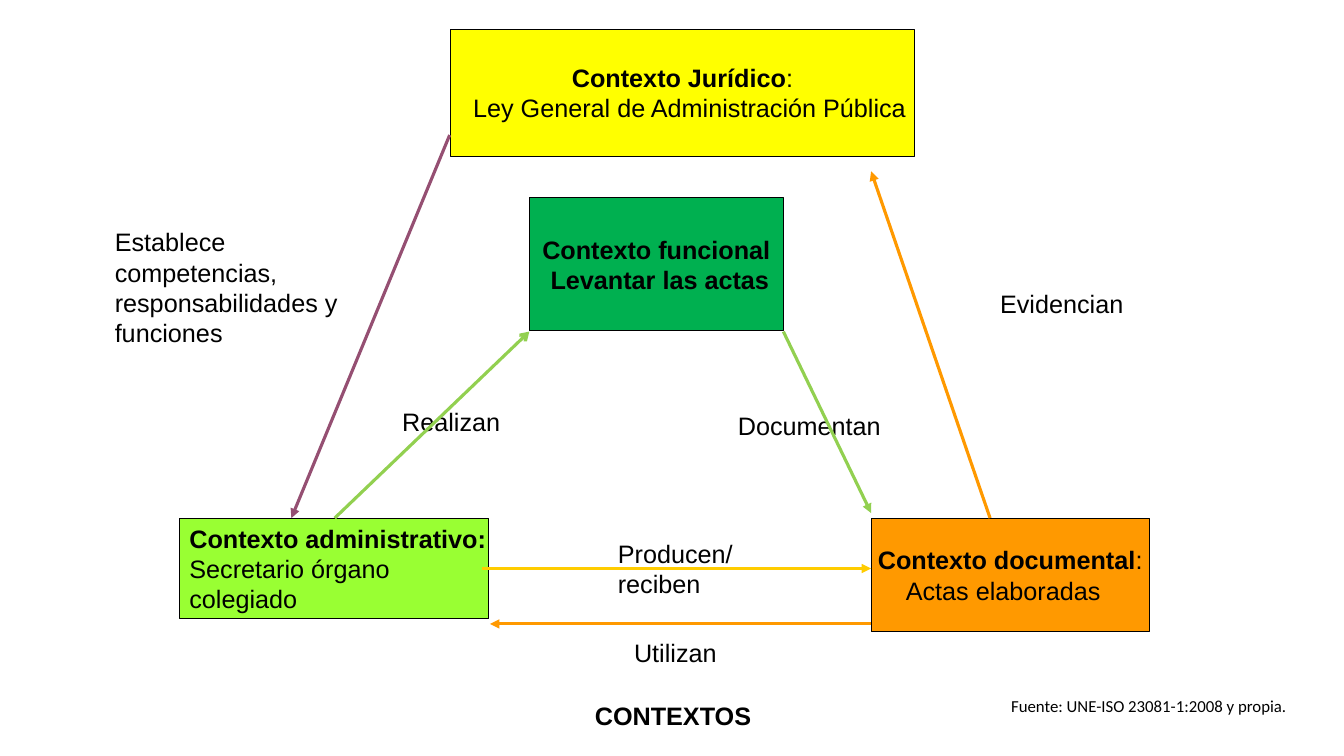
import pptx
import pptx.util
import pptx.dml.color
import pptx.enum.shapes
import pptx.enum.text
import pptx.oxml.ns
import lxml.etree

EMU_PER_PX = 9144
BLACK = pptx.dml.color.RGBColor(0x00, 0x00, 0x00)
YELLOW = pptx.dml.color.RGBColor(0xFF, 0xFF, 0x00)
LIME = pptx.dml.color.RGBColor(0x99, 0xFF, 0x33)
GREEN = pptx.dml.color.RGBColor(0x00, 0xB0, 0x50)
ORANGE = pptx.dml.color.RGBColor(0xFF, 0x99, 0x00)
PURPLE = pptx.dml.color.RGBColor(0x95, 0x4F, 0x72)
GOLD = pptx.dml.color.RGBColor(0xFF, 0xCC, 0x00)
LEAF = pptx.dml.color.RGBColor(0x92, 0xD0, 0x50)

LEFT = pptx.enum.text.PP_ALIGN.LEFT
CENTER = pptx.enum.text.PP_ALIGN.CENTER
TOP = pptx.enum.text.MSO_ANCHOR.TOP
MIDDLE = pptx.enum.text.MSO_ANCHOR.MIDDLE
NO_FIT = pptx.enum.text.MSO_AUTO_SIZE.NONE


def px(*lengths):
    return [pptx.util.Emu(length * EMU_PER_PX) for length in lengths]


def apply_format(target, values):
    for name, value in values.items():
        setattr(target, name, value)


def write_lines(frame, lines, align=LEFT, anchor=TOP, wrap=False, size=18, face="Arial"):
    apply_format(frame, {"word_wrap": wrap, "vertical_anchor": anchor, "auto_size": NO_FIT})
    for number, runs in enumerate(lines):
        line = frame.add_paragraph() if number else frame.paragraphs[0]
        line.alignment = align
        for words, bold in runs:
            run = line.add_run()
            run.text = words
            apply_format(run.font, {"size": pptx.util.Pt(size), "name": face, "bold": bold})
            run.font.color.rgb = BLACK


def add_context(slide, place, colour, lines, align=CENTER, indent=None):
    context = slide.shapes.add_shape(pptx.enum.shapes.MSO_SHAPE.RECTANGLE, *px(*place))
    context.shadow.inherit = False
    context.fill.solid()
    context.fill.fore_color.rgb = colour
    context.line.color.rgb = BLACK
    context.line.width = pptx.util.Pt(0.75)
    write_lines(context.text_frame, lines, align, MIDDLE)
    if indent:
        side, points = indent
        last_line = context.text_frame.paragraphs[-1]._p.get_or_add_pPr()
        last_line.set(side, str(int(pptx.util.Pt(points))))


def add_label(slide, place, lines, **text_format):
    label = slide.shapes.add_textbox(*px(*place))
    write_lines(label.text_frame, [[(words, False)] for words in lines], **text_format)


def add_arrow(slide, ends, colour, head="triangle"):
    arrow = slide.shapes.add_connector(pptx.enum.shapes.MSO_CONNECTOR.STRAIGHT, *px(*ends))
    arrow.line.color.rgb = colour
    arrow.line.width = pptx.util.Pt(2.25)
    qn = pptx.oxml.ns.qn
    lxml.etree.SubElement(arrow.line._get_or_add_ln(), qn("a:tailEnd"), type=head)
    lxml.etree.SubElement(arrow._element.spPr, qn("a:effectLst"))


def place_title(slide, place, words):
    title = slide.shapes.title
    apply_format(title, dict(zip(("left", "top", "width", "height"), px(*place))))
    write_lines(title.text_frame, [[(words, True)]])
    title.text_frame.paragraphs[0].line_spacing = 1.0


def main():
    deck = pptx.Presentation()
    apply_format(deck, dict(zip(("slide_width", "slide_height"), px(1333, 750))))
    slide = deck.slides.add_slide(deck.slide_layouts[5])
    place_title(slide, (580, 690, 176, 40), "CONTEXTOS")

    add_context(slide, (447, 29, 460, 126), YELLOW,
                [[("Contexto Jurídico", True), (":", False)],
                 [("Ley General de Administración Pública", False)]], indent=("marL", 10))
    add_context(slide, (178, 514, 307, 100), LIME,
                [[("Contexto administrativo:", True)],
                 [("Secretario órgano", False)], [("colegiado", False)]], align=LEFT)
    add_context(slide, (525, 196, 252, 132), GREEN,
                [[("Contexto funcional", True)],
                 [("Levantar las actas", True)]], indent=("marL", 5))
    add_context(slide, (864, 514, 276, 113), ORANGE,
                [[("Contexto documental", True), (":", False)],
                 [("Actas elaboradas", False)]], indent=("marR", 10))

    add_label(slide, (104, 220, 260, 131),
              ["Establece competencias, responsabilidades y funciones"], wrap=True)
    add_label(slide, (389, 398, 117, 40), ["Realizan"])
    add_label(slide, (603, 529, 134, 70), ["Producen/", "reciben"])
    add_label(slide, (982, 281, 149, 40), ["Evidencian"])
    add_label(slide, (619, 627, 102, 40), ["Utilizan"])
    add_label(slide, (722, 402, 173, 40), ["Documentan"], wrap=True)
    add_label(slide, (993, 685, 299, 30), ["Fuente: UNE-ISO 23081-1:2008 y propia."],
              wrap=True, size=12, face="Calibri")

    add_arrow(slide, (446, 134, 289, 514), PURPLE)
    add_arrow(slide, (478, 564, 864, 564), GOLD)
    add_arrow(slide, (982, 514, 864, 170), ORANGE)
    add_arrow(slide, (864, 619, 486, 619), ORANGE)
    add_arrow(slide, (332, 514, 525, 329), LEAF, head="arrow")
    add_arrow(slide, (777, 329, 864, 509), LEAF)

    deck.save("out.pptx")


if __name__ == "__main__":
    main()
